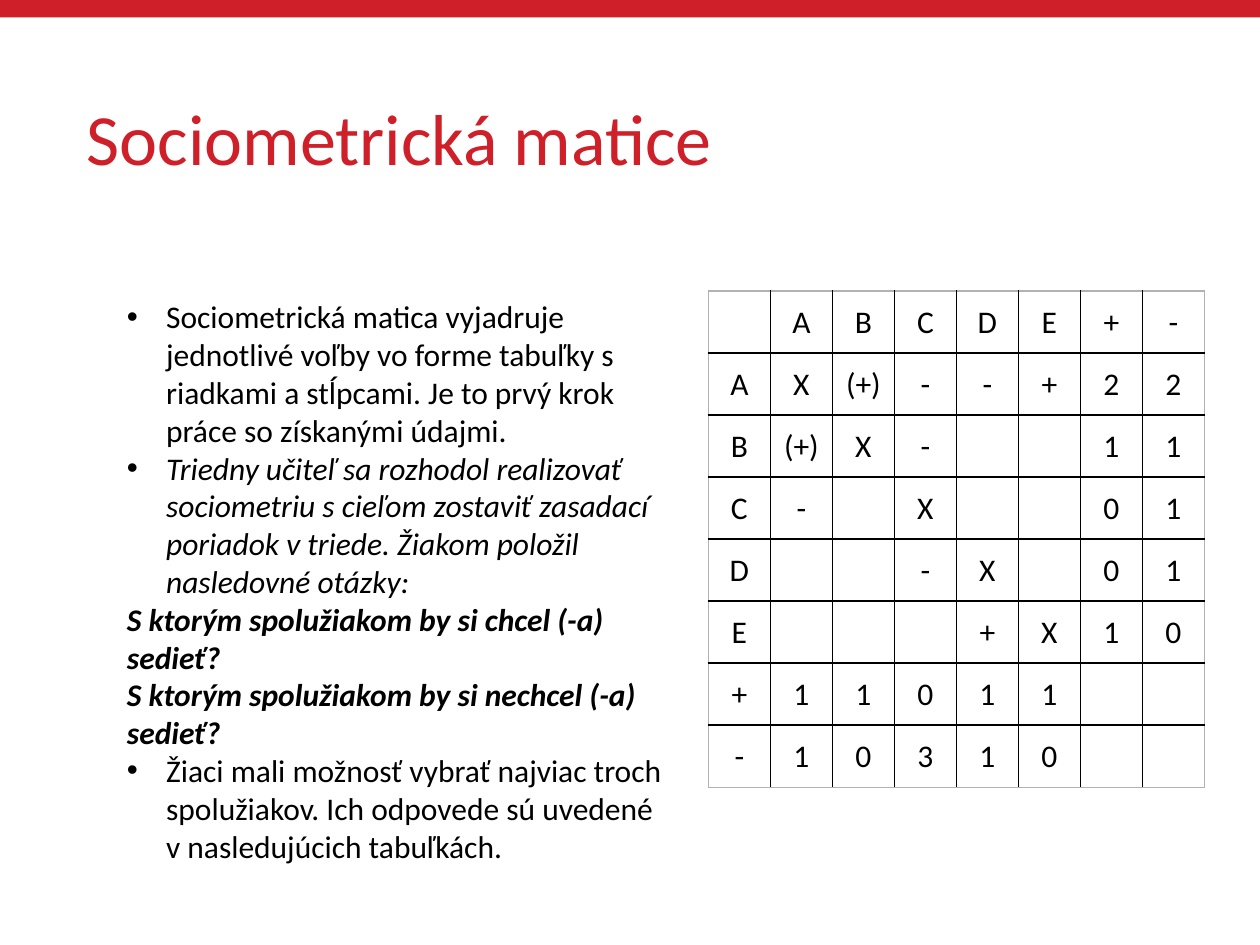
from lxml.etree import SubElement
from pptx import Presentation
from pptx.dml.color import RGBColor
from pptx.enum.shapes import MSO_SHAPE
from pptx.enum.text import MSO_ANCHOR, PP_ALIGN
from pptx.oxml.ns import qn
from pptx.util import Cm, Pt

RED, BLACK, GREY = "CF1F28", "000000", "B2B2B2"
CELL = 1.25
PLAIN = {"size": Pt(18), "name": "Calibri"}
ITALIC = {**PLAIN, "italic": True}
QUESTION = {**ITALIC, "bold": True}
MATRIX = [
    ["", "A", "B", "C", "D", "E", "+", "-"],
    ["A", "X", "(+)", "-", "-", "+", "2", "2"],
    ["B", "(+)", "X", "-", "", "", "1", "1"],
    ["C", "-", "", "X", "", "", "0", "1"],
    ["D", "", "", "-", "X", "", "0", "1"],
    ["E", "", "", "", "+", "X", "1", "0"],
    ["+", "1", "1", "0", "1", "1", "", ""],
    ["-", "1", "0", "3", "1", "0", "", ""],
]
NOTES = [
    ("Sociometrická matica vyjadruje jednotlivé voľby vo forme tabuľky s riadkami a stĺpcami. "
     "Je to prvý krok práce so získanými údajmi.", PLAIN, True),
    ("Triedny učiteľ sa rozhodol realizovať sociometriu s cieľom zostaviť zasadací poriadok v triede. "
     "Žiakom položil nasledovné otázky:", ITALIC, True),
    ("S ktorým spolužiakom by si chcel (-a) sedieť?", QUESTION, False),
    ("S ktorým spolužiakom by si nechcel (-a) sedieť?", QUESTION, False),
    ("Žiaci mali možnosť vybrať najviac troch spolužiakov. "
     "Ich odpovede sú uvedené v nasledujúcich tabuľkách.", PLAIN, True),
]


def color(value):
    """Turn a hex string into a colour."""
    return RGBColor.from_string(value)


def format_font(font, values, hex_color):
    """Set font attributes and colour."""
    for name, value in values.items():
        setattr(font, name, value)
    font.color.rgb = color(hex_color)


def add_bar(slide, left, top, width, height, hex_color):
    """Add a plain filled rectangle."""
    shape = slide.shapes.add_shape(MSO_SHAPE.RECTANGLE, Cm(left), Cm(top), Cm(width), Cm(height))
    shape.shadow.inherit = False
    shape.fill.solid()
    shape.fill.fore_color.rgb = color(hex_color)
    shape.line.fill.background()


def add_text_frame(slide, left, top, width, height):
    """Add a wrapping text box and return its frame."""
    frame = slide.shapes.add_textbox(Cm(left), Cm(top), Cm(width), Cm(height)).text_frame
    frame.word_wrap = True
    return frame


def add_title(slide, text):
    """Add the heading."""
    frame = add_text_frame(slide, 1.5, 1.02, 22.4, 3.68)
    frame.vertical_anchor = MSO_ANCHOR.MIDDLE
    paragraph = frame.paragraphs[0]
    paragraph.text = text
    paragraph.line_spacing = 0.9
    format_font(paragraph.runs[0].font, {"size": Pt(41.2), "name": "Calibri"}, RED)


def add_bullet(paragraph):
    """Give a paragraph a hanging bullet."""
    properties = paragraph._p.get_or_add_pPr()
    properties.set("marL", str(Cm(0.79)))
    properties.set("indent", str(-Cm(0.79)))
    SubElement(properties, qn("a:buFont"), typeface="Arial")
    SubElement(properties, qn("a:buChar"), char="•")


def add_notes(slide, notes):
    """Add the explanation beside the matrix."""
    frame = add_text_frame(slide, 2.31, 5.87, 11.28, 12.57)
    for index, (text, values, bulleted) in enumerate(notes):
        paragraph = frame.add_paragraph() if index else frame.paragraphs[0]
        if bulleted:
            add_bullet(paragraph)
        run = paragraph.add_run()
        run.text = text
        format_font(run.font, values, BLACK)


def set_border(cell, side, hex_color):
    """Draw one border of a cell."""
    line = SubElement(cell._tc.get_or_add_tcPr(), qn(f"a:{side}"), w=str(Pt(1)))
    fill = SubElement(line, qn("a:solidFill"))
    SubElement(fill, qn("a:srgbClr"), val=hex_color)


def format_cell(cell, text, outer_sides):
    """Fill in one cell, with grey lines on the outer sides."""
    for side, outer in outer_sides.items():
        set_border(cell, side, GREY if outer else BLACK)
    cell.fill.background()
    cell.vertical_anchor = MSO_ANCHOR.MIDDLE
    cell.margin_left = cell.margin_right = Cm(0.1)
    paragraph = cell.text_frame.paragraphs[0]
    paragraph.text = text
    paragraph.alignment = PP_ALIGN.CENTER
    format_font(paragraph.font, PLAIN, BLACK)
    for run in paragraph.runs:
        format_font(run.font, PLAIN, BLACK)


def add_matrix(slide, rows):
    """Add the square table of choices."""
    count = len(rows)
    size = Cm(CELL * count)
    table = slide.shapes.add_table(count, count, Cm(14.28), Cm(5.87), size, size).table
    table.first_row = table.horz_banding = False
    for line in [*table.rows]:
        line.height = Cm(CELL)
    for column in table.columns:
        column.width = Cm(CELL)
    last = count - 1
    for row, values in enumerate(rows):
        for column, text in enumerate(values):
            outer_sides = {"lnL": column == 0, "lnR": column == last,
                           "lnT": row == 0, "lnB": row == last}
            format_cell(table.cell(row, column), text, outer_sides)


def main():
    """Build and save the slide."""
    presentation = Presentation()
    presentation.slide_width, presentation.slide_height = Cm(25.4), Cm(19.05)
    slide = presentation.slides.add_slide(presentation.slide_layouts[6])
    add_bar(slide, 0, 0, 25.4, 0.35, RED)
    add_title(slide, "Sociometrická matice")
    add_matrix(slide, MATRIX)
    add_notes(slide, NOTES)
    presentation.save("out.pptx")


if __name__ == "__main__":
    main()
